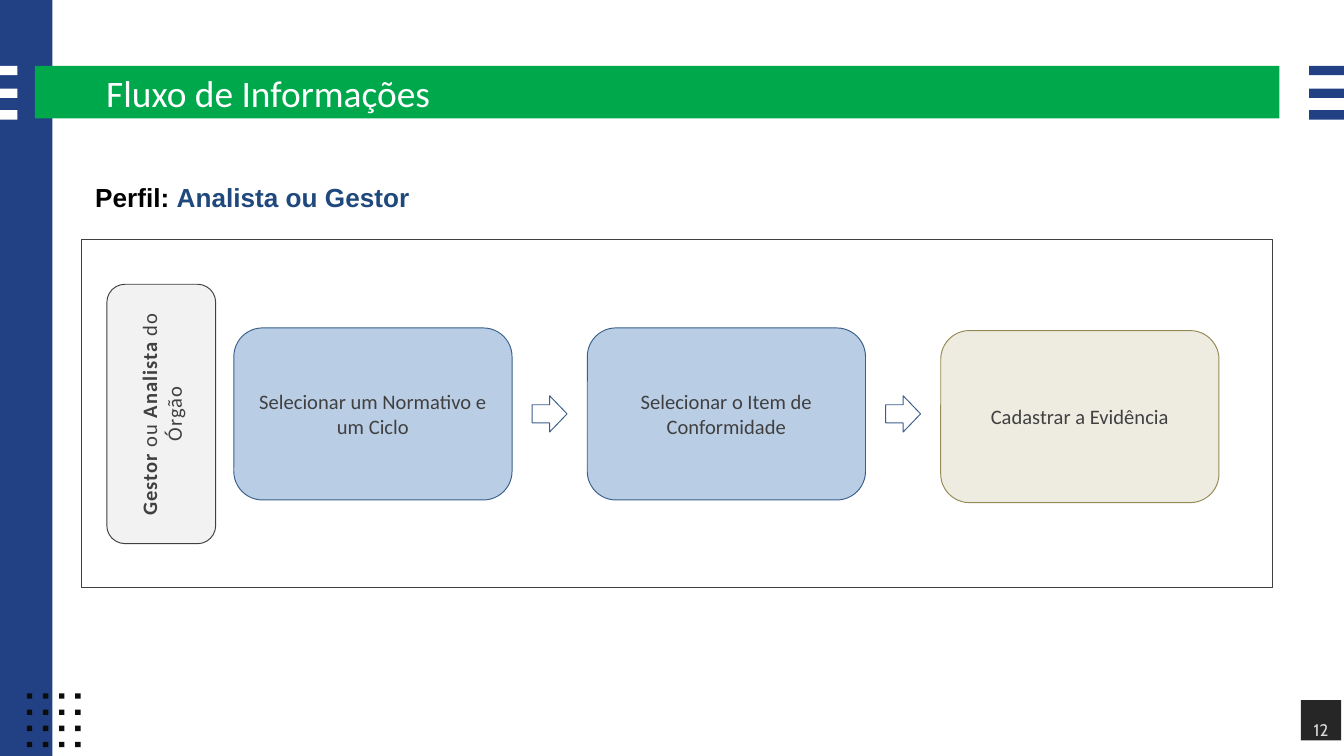
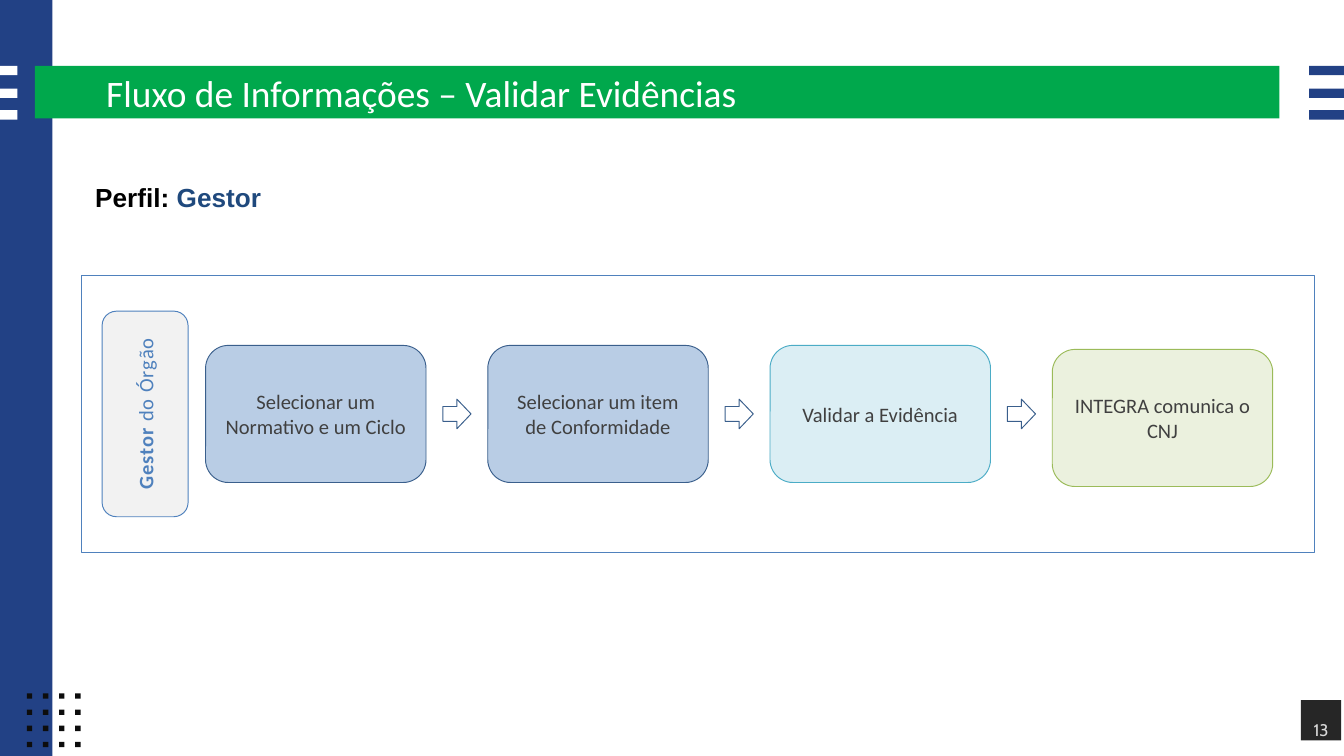
from dataclasses import dataclass
from itertools import product

from pptx import Presentation
from pptx.dml.color import RGBColor
from pptx.enum.shapes import MSO_SHAPE as Preset
from pptx.enum.text import MSO_ANCHOR as Anchor, MSO_AUTO_SIZE as AutoSize, PP_ALIGN as Align
from pptx.oxml.ns import qn
from pptx.shapes.autoshape import Shape
from pptx.slide import Slide
from pptx.util import Inches, Pt

WHITE = RGBColor(0xFF, 0xFF, 0xFF)
BLACK = RGBColor(0x00, 0x00, 0x00)
BRAND_BLUE = RGBColor(0x22, 0x41, 0x85)
BAND_GREEN = RGBColor(0x00, 0xA8, 0x4C)
DOT_BLACK = RGBColor(0x0D, 0x0D, 0x0D)
NUMBER_FILL = RGBColor(0x26, 0x26, 0x26)
NUMBER_TEXT = RGBColor(0xD9, 0xD9, 0xD9)
PROFILE_BLUE = RGBColor(0x1F, 0x49, 0x7D)
DARK_GRAY = RGBColor(0x40, 0x40, 0x40)
LIGHT_GRAY = RGBColor(0xF2, 0xF2, 0xF2)
ACCENT_BLUE = RGBColor(0x4F, 0x81, 0xBD)
STEP_LINE = RGBColor(0x3A, 0x5F, 0x8C)

TITLE_FONT = BODY_FONT = "Calibri"
PROFILE_FONT = "Arial"
NUMBER_FONT = "Cabin"
SLIDE_WIDTH = 10
SLIDE_HEIGHT = SLIDE_WIDTH * 9 / 16
FLOW_MIDDLE = 3.08


@dataclass(frozen=True)
class Box:
    left: float
    top: float
    width: float
    height: float

    def lengths(self) -> tuple:
        return tuple(Inches(n) for n in (self.left, self.top, self.width, self.height))


@dataclass(frozen=True)
class Span:
    text: str
    bold: bool
    color: RGBColor


@dataclass(frozen=True)
class StepStyle:
    fill: RGBColor
    line: RGBColor


@dataclass(frozen=True)
class Step:
    text: str
    style: StepStyle


@dataclass(frozen=True)
class Flow:
    """Sizes of one flow; everything is centred on FLOW_MIDDLE."""
    color: RGBColor
    frame_width: float
    frame_height: float
    role_center: float
    role_length: float
    role_depth: float
    first_left: float
    pitch: float
    step_width: float
    step_height: float
    last_drop: float
    arrow_width: float
    arrow_height: float
    role: list[Span]
    steps: list[Step]


@dataclass(frozen=True)
class Page:
    number: int
    title: str
    profile: str
    profile_width: float
    flow: Flow


SELECT = StepStyle(RGBColor(0xB9, 0xCD, 0xE5), STEP_LINE)
REGISTER = StepStyle(RGBColor(0xEE, 0xEC, 0xE1), RGBColor(0x94, 0x8A, 0x54))
VALIDATE = StepStyle(RGBColor(0xDB, 0xEE, 0xF4), RGBColor(0x4B, 0xAC, 0xC6))
NOTIFY = StepStyle(RGBColor(0xEB, 0xF1, 0xDE), RGBColor(0x9B, 0xBB, 0x59))

PAGES = [
    Page(12, "Fluxo de Informações", "Analista ou Gestor", 2.55, Flow(
        color=DARK_GRAY, frame_width=8.86, frame_height=2.59,
        role_center=1.2, role_length=1.93, role_depth=0.81,
        first_left=1.74, pitch=2.63, step_width=2.07, step_height=1.28,
        last_drop=0.02, arrow_width=0.26, arrow_height=0.27,
        role=[Span("Gestor", True, DARK_GRAY), Span(" ou ", False, DARK_GRAY),
              Span("Analista ", True, DARK_GRAY), Span("do Órgão", False, DARK_GRAY)],
        steps=[Step("Selecionar um Normativo e um Ciclo", SELECT),
               Step("Selecionar o Item de Conformidade", SELECT),
               Step("Cadastrar a Evidência", REGISTER)])),
    Page(13, "Fluxo de Informações – Validar Evidências", "Gestor", 1.44, Flow(
        color=ACCENT_BLUE, frame_width=9.17, frame_height=2.06,
        role_center=1.08, role_length=1.53, role_depth=0.64,
        first_left=1.53, pitch=2.1, step_width=1.64, step_height=1.02,
        last_drop=0.03, arrow_width=0.21, arrow_height=0.22,
        role=[Span("Gestor", True, ACCENT_BLUE), Span(" do Órgão", False, ACCENT_BLUE)],
        steps=[Step("Selecionar um Normativo e um Ciclo", SELECT),
               Step("Selecionar um item de Conformidade", SELECT),
               Step("Validar a Evidência", VALIDATE),
               Step("INTEGRA comunica o CNJ", NOTIFY)])),
]


def add_preset(shapes, preset: Preset, box: Box, fill: RGBColor | None = None,
               line: RGBColor | None = None) -> Shape:
    shape = shapes.add_shape(preset, *box.lengths())
    shape.shadow.inherit = False
    if fill is None:
        shape.fill.background()
    else:
        shape.fill.solid()
        shape.fill.fore_color.rgb = fill
    if line is None:
        shape.line.fill.background()
    else:
        shape.line.color.rgb = line
        shape.line.width = Pt(0.5)
    return shape


def write(shape: Shape, spans: list[Span], font: str, size: float, align: Align) -> None:
    para = shape.text_frame.paragraphs[0]
    para.alignment = align
    for span in spans:
        run = para.add_run()
        run.text = span.text
        run.font.name = font
        run.font.size = Pt(size)
        run.font.bold = span.bold
        run.font.color.rgb = span.color


def add_decoration(page: Slide) -> None:
    add_preset(page.shapes, Preset.RECTANGLE, Box(0, 0, 0.39, SLIDE_HEIGHT), BRAND_BLUE)
    add_preset(page.shapes, Preset.RECTANGLE, Box(0.26, 0.49, 9.26, 0.39), BAND_GREEN)
    for left, width, color in ((0, 0.13, WHITE), (9.74, 0.26, BRAND_BLUE)):
        bars = page.shapes.add_group_shape().shapes
        for top in (0.49, 0.66, 0.82):
            add_preset(bars, Preset.RECTANGLE, Box(left, top, width, 0.07), color)
    dots = page.shapes.add_group_shape().shapes
    for row, column in product(range(4), repeat=2):
        dot = Box(0.2 + 0.12 * column, 5.16 + 0.12 * row, 0.04, 0.04)
        add_preset(dots, Preset.RECTANGLE, dot, DOT_BLACK)
    add_preset(page.shapes, Preset.RECTANGLE, Box(9.68, 5.21, 0.3, 0.3), NUMBER_FILL)


def set_title(page: Slide, text: str) -> None:
    title = page.shapes.title
    title.element.getparent().append(title.element)  # in front of the green band
    title.left, title.top, title.width, title.height = Box(0.69, 0.48, 8.62, 0.42).lengths()
    title.text_frame.vertical_anchor = Anchor.MIDDLE
    title.text_frame.auto_size = AutoSize.NONE
    write(title, [Span(text, False, WHITE)], TITLE_FONT, 20, Align.LEFT)


def add_number(page: Slide, number: int) -> None:
    box = page.shapes.add_textbox(*Box(9.68, 5.29, 0.3, 0.28).lengths())
    frame = box.text_frame
    frame.word_wrap = True
    frame.vertical_anchor = Anchor.MIDDLE
    frame.margin_left = frame.margin_right = frame.margin_top = frame.margin_bottom = 0
    write(box, [Span(str(number), False, NUMBER_TEXT)], NUMBER_FONT, 9, Align.CENTER)


def add_profile(page: Slide, profile: str, width: float) -> None:
    box = page.shapes.add_textbox(*Box(0.61, 1.3, width, 0.34).lengths())
    box.text_frame.word_wrap = False
    box.text_frame.auto_size = AutoSize.SHAPE_TO_FIT_TEXT
    spans = [Span("Perfil: ", True, BLACK), Span(profile, True, PROFILE_BLUE)]
    write(box, spans, PROFILE_FONT, 14, Align.LEFT)


def centered(left: float, width: float, height: float) -> Box:
    """Box whose vertical middle is the middle of the flow."""
    return Box(left, FLOW_MIDDLE - height / 2, width, height)


def add_flow(page: Slide, flow: Flow) -> None:
    shapes = page.shapes.add_group_shape().shapes
    last = len(flow.steps) - 1
    gap = flow.pitch - flow.step_width
    for index, step in enumerate(flow.steps):
        left = flow.first_left + index * flow.pitch
        box = centered(left, flow.step_width, flow.step_height)
        card = add_preset(shapes, Preset.ROUNDED_RECTANGLE, box, step.style.fill, step.style.line)
        card.text_frame.word_wrap = True
        write(card, [Span(step.text, False, DARK_GRAY)], BODY_FONT, 11, Align.CENTER)
        if index == last:
            card.top += Inches(flow.last_drop)
        else:
            arrow_left = left + flow.step_width + (gap - flow.arrow_width) / 2
            arrow = centered(arrow_left, flow.arrow_width, flow.arrow_height)
            add_preset(shapes, Preset.RIGHT_ARROW, arrow, line=STEP_LINE)

    role_box = centered(flow.role_center - flow.role_length / 2, flow.role_length, flow.role_depth)
    role = add_preset(shapes, Preset.ROUNDED_RECTANGLE, role_box, LIGHT_GRAY, flow.color)
    role.rotation = 270
    role.text_frame.word_wrap = True
    write(role, flow.role, BODY_FONT, 11, Align.CENTER)
    for properties in role.element.iter(qn("a:rPr")):
        properties.set("spc", "50")

    frame = centered(0.61, flow.frame_width, flow.frame_height)
    add_preset(shapes, Preset.RECTANGLE, frame, line=flow.color)


def main() -> None:
    deck = Presentation()
    deck.slide_width, deck.slide_height = Inches(SLIDE_WIDTH), Inches(SLIDE_HEIGHT)
    title_only = deck.slide_layouts[5]
    for content in PAGES:
        page = deck.slides.add_slide(title_only)
        add_decoration(page)
        set_title(page, content.title)
        add_number(page, content.number)
        add_flow(page, content.flow)
        add_profile(page, content.profile, content.profile_width)
    deck.save("out.pptx")


if __name__ == "__main__":
    main()
